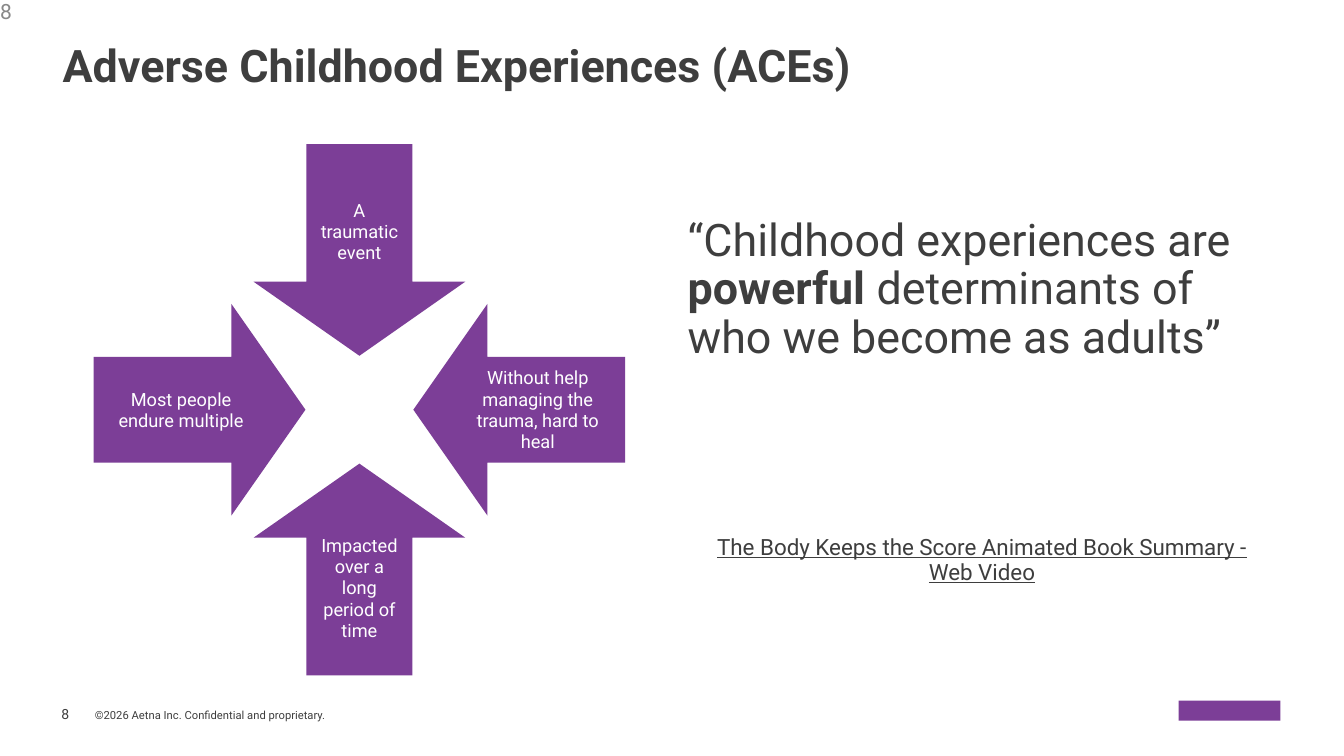
from pptx import Presentation
from pptx import util as u
from pptx.dml.color import RGBColor
from pptx.enum import shapes, text
from pptx.oxml import xmlchemy

PURPLE = RGBColor(0x7C, 0x3E, 0x97)
DARK = RGBColor(0x3E, 0x3E, 0x3E)
GRAY = RGBColor(0x88, 0x88, 0x88)
WHITE = RGBColor(0xFF, 0xFF, 0xFF)
FONT = "Roboto"
LEFT, CENTER = text.PP_ALIGN.LEFT, text.PP_ALIGN.CENTER

ARROW_SIZE = 2.1
ARROW_REACH = 1.585
ARROWS = [
    (shapes.MSO_SHAPE.DOWN_ARROW, 0, -1, 0.11, "A traumatic event"),
    (shapes.MSO_SHAPE.LEFT_ARROW, 1, 0, 0.2, "Without help managing the trauma, hard to heal"),
    (shapes.MSO_SHAPE.UP_ARROW, 0, 1, 0.11, "Impacted over a long period of time"),
    (shapes.MSO_SHAPE.RIGHT_ARROW, -1, 0, 0.2, "Most people endure multiple"),
]


def place(shape, box):
    """Move a shape to a box of left, top, width and height in inches."""
    shape.left, shape.top, shape.width, shape.height = (u.Inches(length) for length in box)


def write(shape, spans, size, color, align=LEFT, spacing=None, side=0, top=0,
          anchor=text.MSO_ANCHOR.TOP):
    """Fill a shape with one paragraph of (words, bold, underline) spans."""
    frame = shape.text_frame
    frame.word_wrap = True
    frame.auto_size = text.MSO_AUTO_SIZE.NONE
    frame.vertical_anchor = anchor
    frame.margin_left = frame.margin_right = u.Inches(side)
    frame.margin_top, frame.margin_bottom = u.Inches(top), 0
    para = frame.paragraphs[0]
    para.alignment = align
    para.space_before = u.Pt(0)
    if spacing:
        para.line_spacing = spacing
    for words, bold, underline in spans:
        span = para.add_run()
        span.text = words
        font = span.font
        font.name, font.size, font.bold, font.underline = FONT, u.Pt(size), bold, underline
        font.color.rgb = color
    return para


def add_note(page, box, words, size, color, underline=False, **layout):
    """Add a plain text box."""
    note = page.shapes.add_textbox(0, 0, 0, 0)
    place(note, box)
    write(note, [(words, False, underline)], size, color, **layout)


def add_solid(page, kind, box):
    """Add a flat purple shape."""
    shape = page.shapes.add_shape(kind, 0, 0, 0, 0)
    place(shape, box)
    shape.shadow.inherit = False
    shape.fill.solid()
    shape.fill.fore_color.rgb = PURPLE
    shape.line.fill.background()
    return shape


def add_title(page, box):
    """Set the slide title."""
    title = page.shapes.title
    place(title, box)
    write(title, [("Adverse Childhood Experiences (ACEs)", True, False)], 32, DARK, top=0.01)


def add_quote(page, box):
    """Set the quotation in the body placeholder, without a bullet."""
    quote = page.placeholders[1]
    place(quote, box)
    spans = [
        ("“Childhood experiences are ", False, False),
        ("powerful", True, False),
        (" determinants of who we become as adults”", False, False),
    ]
    para = write(quote, spans, 32, DARK, spacing=0.9, top=0.06)
    properties = para._p.get_or_add_pPr()
    properties.set("marL", "0")
    properties.set("indent", "0")
    properties.append(xmlchemy.OxmlElement("a:buNone"))


def add_arrows(page, box):
    """Point four labelled arrows at the middle of the box."""
    left, top, width, height = box
    corner_x = left + (width - ARROW_SIZE) / 2
    corner_y = top + (height - ARROW_SIZE) / 2
    for kind, across, down, side, label in ARROWS:
        arrow = add_solid(page, kind, (corner_x + across * ARROW_REACH,
                                       corner_y + down * ARROW_REACH,
                                       ARROW_SIZE, ARROW_SIZE))
        arrow.adjustments[0] = 0.5
        arrow.adjustments[1] = 0.35
        write(arrow, [(label, False, False)], 13, WHITE, align=CENTER,
              spacing=u.Pt(15.1), side=side, anchor=text.MSO_ANCHOR.MIDDLE)


def add_footer(page, box):
    """Add the page number, copyright line and brand mark."""
    left, top, width, height = box
    add_note(page, (left, top, 0.3, height), "8", 10, DARK, spacing=u.Pt(10.3))
    add_note(page, (left + 0.33, top + 0.02, 2.5, height),
             "©2026 Aetna Inc. Confidential and proprietary.", 8, DARK, spacing=u.Pt(8.6))
    add_solid(page, shapes.MSO_SHAPE.RECTANGLE, (left + width - 1.01, top - 0.07, 1.01, 0.2))


def main():
    """Build and save the slide."""
    deck = Presentation()
    deck.slide_width, deck.slide_height = u.Inches(13.33), u.Inches(7.5)
    page = deck.slides.add_slide(deck.slide_layouts[1])
    add_title(page, (0.62, 0.36, 8.54, 0.56))
    add_quote(page, (6.82, 2.1, 5.73, 1.52))
    add_note(page, (6.96, 5.29, 5.56, 0.53),
             "The Body Keeps the Score Animated Book Summary - Web Video", 16, DARK,
             underline=True, align=CENTER, spacing=u.Pt(18.2), top=0.01)
    add_note(page, (0, -0.02, 0.15, 0.28), "8", 15, GRAY, top=0.01)
    add_arrows(page, (0.93, 1.43, 5.27, 5.27))
    add_footer(page, (0.61, 7.02, 12.09, 0.17))
    deck.save("out.pptx")


if __name__ == "__main__":
    main()
